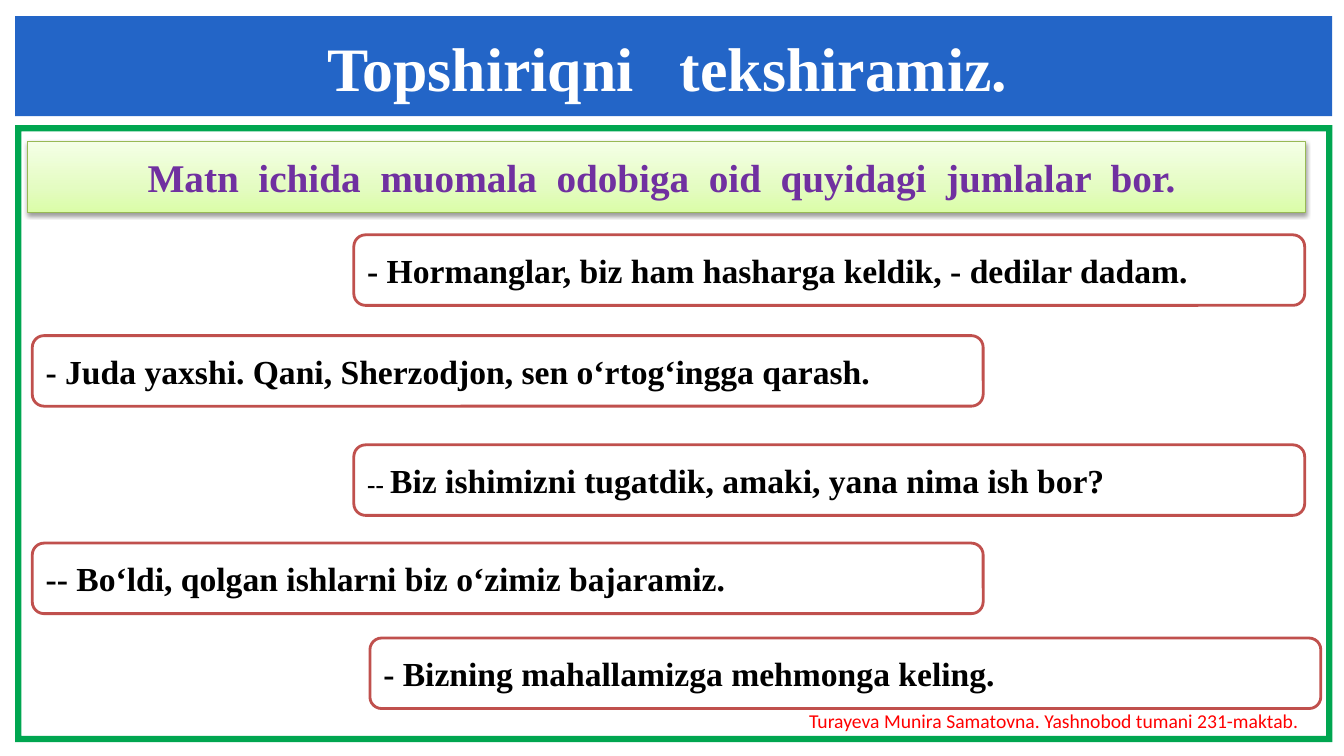
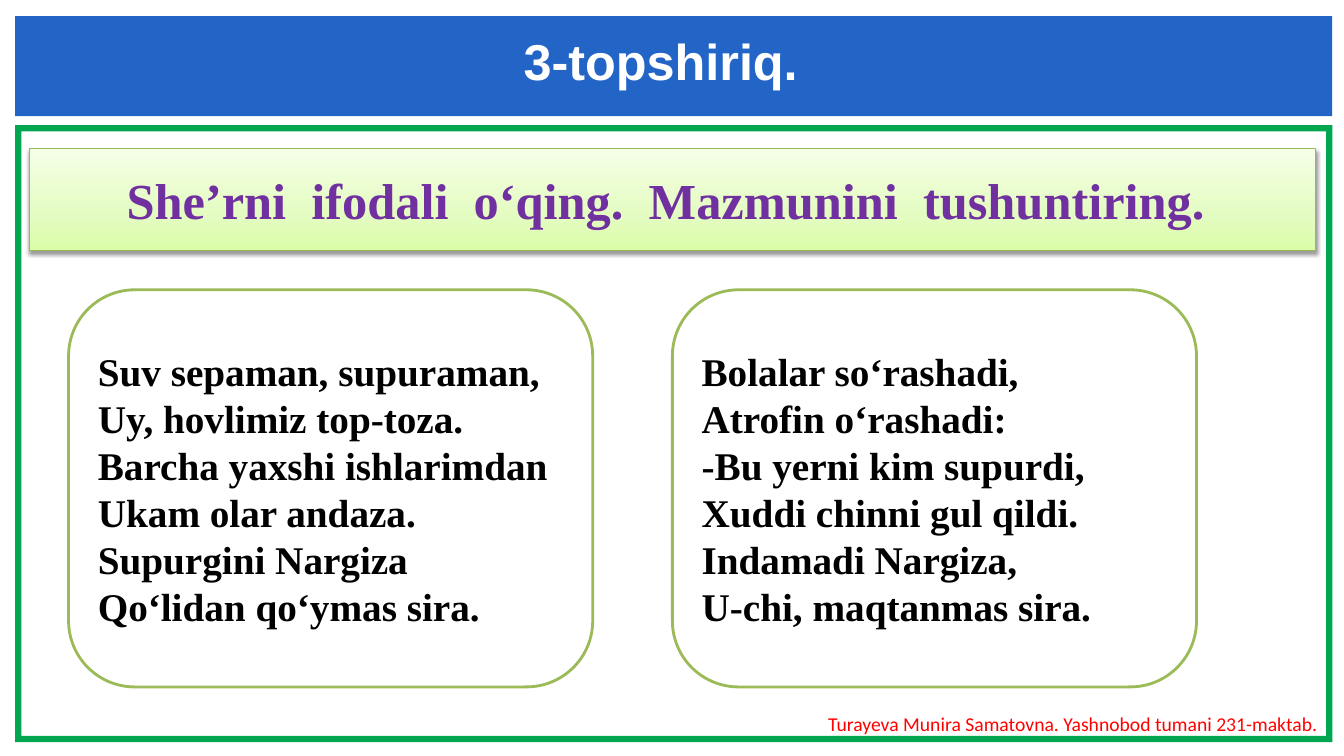
from copy import deepcopy
from typing import NamedTuple

from lxml.etree import SubElement
from pptx import Presentation
from pptx.dml.color import RGBColor
from pptx.enum.shapes import MSO_SHAPE as Shape
from pptx.enum.text import MSO_ANCHOR as Anchor, PP_ALIGN as Align
from pptx.oxml.ns import qn
from pptx.util import Inches, Pt

COLUMNS, ROWS = 160, 90
WIDTH, HEIGHT = Inches(13.33), Inches(7.5)
SERIF = "Times New Roman"
WHITE, BLACK, BLUE, GREEN = "FFFFFF", "000000", "2365C7", "00A650"
PURPLE, RED, BRICK, OLIVE = "7030A0", "FF0000", "C0504D", "9BBB59"
BANNER_LINE = "98B955"
BANNER_STOPS = [(0, "DAFDA7"), (0.35, "E4FCC2"), (1, "F5FFE7")]
CREDIT = "Turayeva Munira Samatovna. Yashnobod tumani 231-maktab."


class Box(NamedTuple):
    """A rectangle in grid columns and rows."""
    left: float
    top: float
    width: float
    height: float

    def inner(self, left, top, width, height):
        """Return a box offset from this one's corner."""
        return Box(self.left + left, self.top + top, width, height)

    def lengths(self):
        """Return the box in slide units."""
        column, row = WIDTH / COLUMNS, HEIGHT / ROWS
        return (int(self.left * column), int(self.top * row),
                int(self.width * column), int(self.height * row))


BAND = Box(1.8, 1.92, 156.8, 11.9)
FRAME = Box(1.8, 14.9, 156.8, 73.44)


def color(code):
    """Turn a hex string into a colour."""
    return RGBColor.from_string(code)


def add_panel(slide, kind, box, fill, line=None, weight=2):
    """Add a flat preset shape, outlined if a line colour is given."""
    shape = slide.shapes.add_shape(kind, *box.lengths())
    shape.shadow.inherit = False
    shape.fill.solid()
    shape.fill.fore_color.rgb = color(fill)
    if line:
        shape.line.color.rgb = color(line)
        shape.line.width = Pt(weight)
    else:
        shape.line.fill.background()
    return shape


def write(shape, lines, size, ink=BLACK, font=SERIF, bold=True,
          align=Align.CENTER, anchor=Anchor.MIDDLE):
    """Write one paragraph per line and return the last paragraph."""
    frame = shape.text_frame
    frame.word_wrap = True
    frame.vertical_anchor = anchor
    for index, line in enumerate(lines):
        paragraph = frame.add_paragraph() if index else frame.paragraphs[0]
        paragraph.add_run().text = line
        paragraph.alignment = align
        paragraph.font.size = Pt(size)
        paragraph.font.name = font
        paragraph.font.bold = bold
        paragraph.font.color.rgb = color(ink)
    return paragraph


def add_label(slide, box, text, size, **style):
    """Add a one-line text box without margins."""
    label = slide.shapes.add_textbox(*box.lengths())
    frame = label.text_frame
    frame.margin_left = frame.margin_right = 0
    frame.margin_top = frame.margin_bottom = 0
    write(label, [text], size, anchor=Anchor.TOP, **style)


def add_page(presentation, title, size, font):
    """Add a slide with the green frame, blue band and title."""
    slide = presentation.slides.add_slide(presentation.slide_layouts[6])
    frame = add_panel(slide, Shape.FRAME, FRAME, GREEN)
    frame.adjustments[0] = 0.01
    add_panel(slide, Shape.RECTANGLE, BAND, BLUE)
    add_label(slide, BAND.inner(18.2, 1.68, 119, 8), title, size,
              ink=WHITE, font=font)
    return slide


def add_banner(slide, box, text, size):
    """Add the pale green task banner with a soft shadow."""
    banner = add_panel(slide, Shape.RECTANGLE, box, WHITE, BANNER_LINE, 0.75)
    banner.fill.gradient()
    banner.fill.gradient_angle = 90
    properties = banner._element.spPr
    first = properties.find(".//" + qn("a:gs"))
    first.addnext(deepcopy(first))
    for stop, (position, code) in zip(banner.fill.gradient_stops, BANNER_STOPS):
        stop.position = position
        stop.color.rgb = color(code)
    shadow = SubElement(properties.find(qn("a:effectLst")), qn("a:outerShdw"),
                        blurRad=str(Pt(3.1)), dist=str(Pt(1.6)),
                        dir="5400000", rotWithShape="0")
    shade = SubElement(shadow, qn("a:srgbClr"), val=BLACK)
    SubElement(shade, qn("a:alpha"), val="38000")
    write(banner, [text], size, PURPLE)


def add_dialogue(slide, box, replies):
    """Place replies in staggered bubbles."""
    for column, row, dash, dash_size, words in replies:
        bubble = add_panel(slide, Shape.ROUNDED_RECTANGLE,
                           box.inner(column, row, 113.2, 8.4), WHITE, BRICK)
        paragraph = write(bubble, [dash], 24, align=Align.JUSTIFY)
        paragraph.add_run().text = words
        if dash_size != 24:
            paragraph.runs[0].font.size = Pt(dash_size)


def add_poem(slide, box, verses, gap=9.48):
    """Place verses side by side in equal rounded cards."""
    width = (box.width - gap * (len(verses) - 1)) / len(verses)
    for index, lines in enumerate(verses):
        card = add_panel(slide, Shape.ROUNDED_RECTANGLE,
                         box.inner(index * (width + gap), 0, width, box.height),
                         WHITE, OLIVE)
        write(card, lines, 28, align=Align.LEFT)


def add_credit(slide, box):
    """Add the red credit line."""
    add_label(slide, box, CREDIT, 14, ink=RED, font="Calibri", bold=False)


def add_review_slide(presentation):
    """Build the slide that checks the homework."""
    slide = add_page(presentation, "Topshiriqni   tekshiramiz.", 44.1, SERIF)
    add_banner(slide, FRAME.inner(1.44, 1.9, 152.2, 8.5),
               "Matn  ichida  muomala  odobiga  oid  quyidagi  jumlalar  bor. ", 28)
    add_dialogue(slide, FRAME.inner(2.04, 13.06, 153.4, 56.4), [
        (38.28, 0, "- ", 24, "Hormanglar, biz ham hasharga keldik, - dedilar dadam."),
        (0, 12, "- ", 24, "Juda yaxshi. Qani, Sherzodjon, sen o‘rtog‘ingga qarash."),
        (38.28, 25, "-- ", 18, "Biz ishimizni tugatdik, amaki, yana nima ish bor?"),
        (0, 36.7, "-- ", 24, "Bo‘ldi, qolgan ishlarni biz o‘zimiz bajaramiz."),
        (40.2, 48, "- ", 24, "Bizning mahallamizga mehmonga keling."),
    ])
    add_credit(slide, FRAME.inner(91.92, 69.46, 63.5, 2.9))


def add_poem_slide(presentation):
    """Build the slide with the poem."""
    slide = add_page(presentation, "3-topshiriq. ", 36, "Arial")
    add_banner(slide, FRAME.inner(1.68, 2.74, 153.1, 12.24),
               "She’rni  ifodali  o‘qing.  Mazmunini  tushuntiring. ", 36)
    add_poem(slide, FRAME.inner(6.36, 19.6, 134.28, 47.28), [
        ["Suv sepaman, supuraman,", "Uy, hovlimiz top-toza.",
         "Barcha yaxshi ishlarimdan", "Ukam olar andaza.",
         "Supurgini Nargiza", "Qo‘lidan qo‘ymas sira."],
        ["Bolalar so‘rashadi,", "Atrofin o‘rashadi:",
         "-Bu yerni kim supurdi,", "Xuddi chinni gul qildi.",
         "Indamadi Nargiza,", "U-chi, maqtanmas sira."],
    ])
    add_credit(slide, FRAME.inner(95.16, 69.82, 61.56, 2.9))


def main():
    """Build and save the presentation."""
    presentation = Presentation()
    presentation.slide_width, presentation.slide_height = WIDTH, HEIGHT
    add_review_slide(presentation)
    add_poem_slide(presentation)
    presentation.save("out.pptx")


if __name__ == "__main__":
    main()
